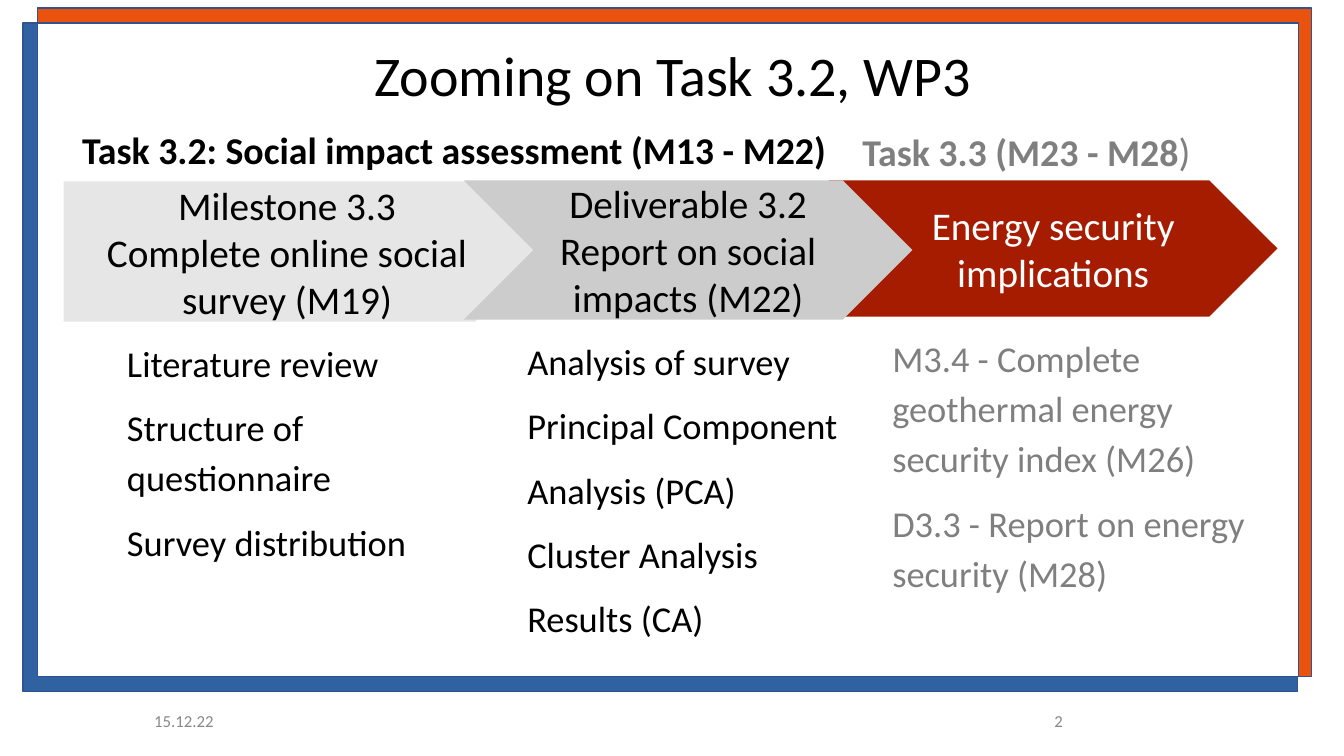
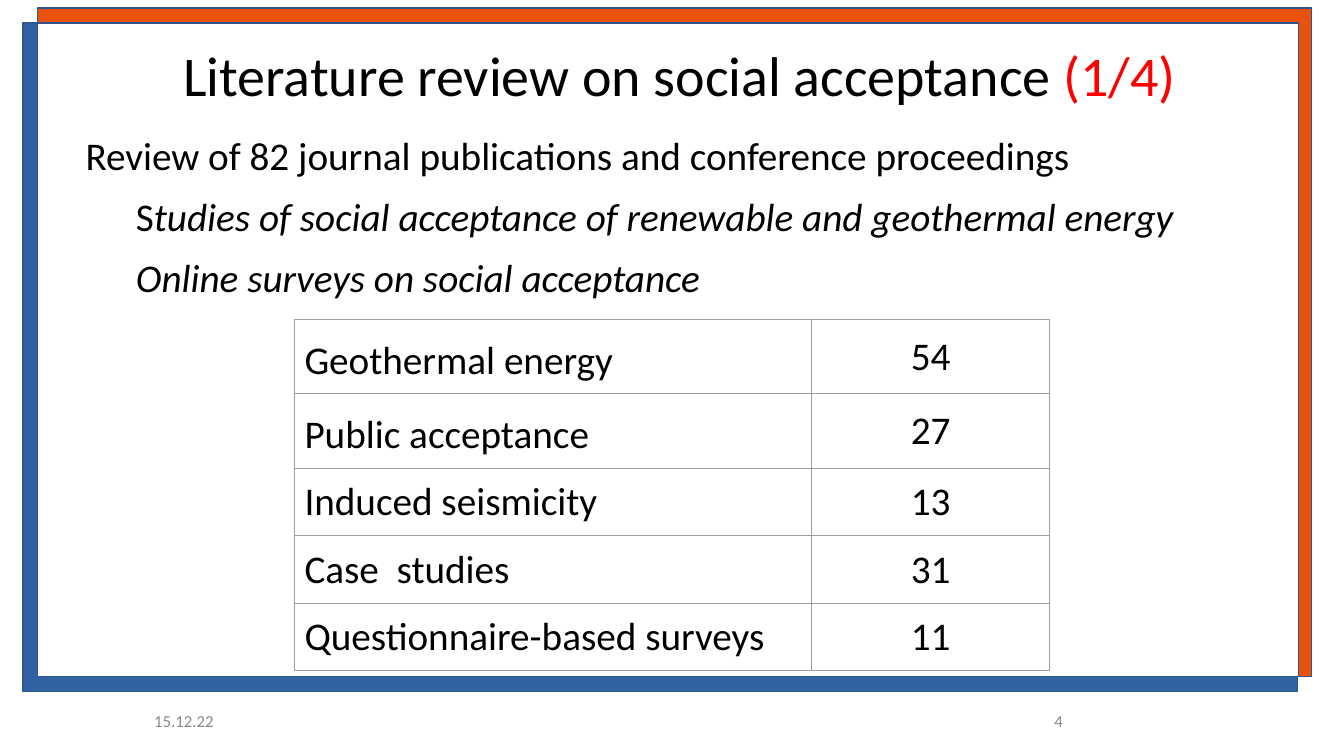
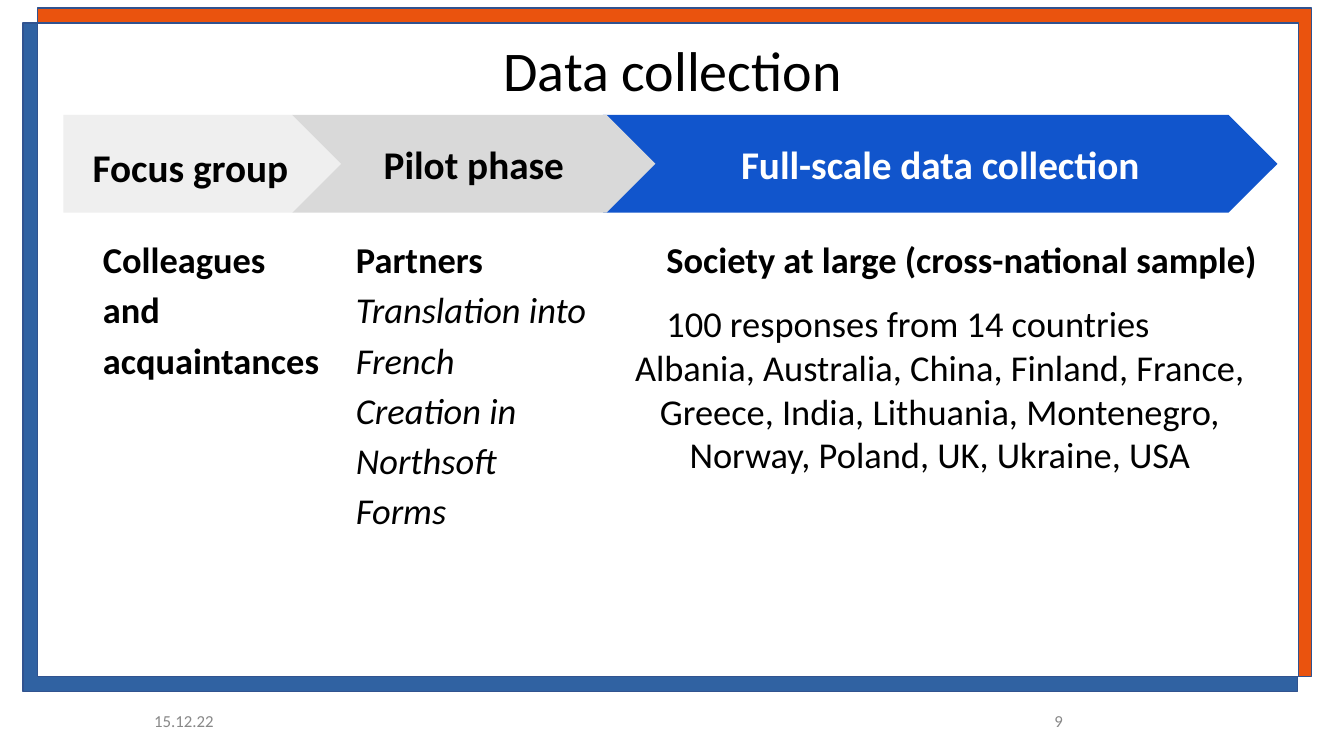
from dataclasses import dataclass
from typing import NamedTuple

from lxml.etree import SubElement
from pptx import Presentation
from pptx.dml.color import RGBColor
from pptx.enum.shapes import MSO_SHAPE
from pptx.enum.text import MSO_ANCHOR, PP_ALIGN
from pptx.oxml.ns import qn
from pptx.util import Inches, Pt

# Shared style
COLORS = {
    "orange": "EA530E", "blue": "3062A2", "edge": "31538F", "white": "FFFFFF",
    "black": "000000", "gray": "7F7F7F", "footer": "888888", "red": "FF0000",
    "brick": "A61C00", "royal": "1155CC", "cloud": "E7E6E6", "silver": "CCCCCC",
    "mist": "EFEFEF", "ash": "D9D9D9", "grid": "9E9E9E",
}
FONT = "Calibri"
DATE = "15.12.22"
LEFT, CENTER, RIGHT = PP_ALIGN.LEFT, PP_ALIGN.CENTER, PP_ALIGN.RIGHT
TOP, MIDDLE = MSO_ANCHOR.TOP, MSO_ANCHOR.MIDDLE
STAGE_INSET = (0.13, 0.13)
LABEL_INSET = (0.1, 0.1)


class Area(NamedTuple):
    left: float
    top: float
    width: float
    height: float

    def lengths(self) -> list:
        return [Inches(value) for value in self]


@dataclass
class Span:
    text: str
    size: float = 26
    color: str = "black"
    bold: bool = False
    italic: bool = False


@dataclass
class Para:
    spans: list[Span]
    align: PP_ALIGN = LEFT
    indent: float = 0
    line: float = 1.0
    before: float = 0
    after: float = 0


@dataclass
class Stage:
    """One arrow of a process, with the details below it."""
    kind: MSO_SHAPE
    fill: str
    area: Area
    heading: list[Para]
    detail_area: Area
    details: list[Para]


# Text
def write(frame, paras: list[Para], anchor: MSO_ANCHOR = TOP, inset: tuple = (0.1, 0.05)) -> None:
    side, end = (Inches(value) for value in inset)
    frame_format = {
        "word_wrap": True, "vertical_anchor": anchor,
        "margin_left": side, "margin_right": side, "margin_top": end, "margin_bottom": end,
    }
    for name, value in frame_format.items():
        setattr(frame, name, value)
    for index, para in enumerate(paras):
        paragraph = frame.paragraphs[0] if index == 0 else frame.add_paragraph()
        fill_paragraph(paragraph, para, first=index == 0)


def fill_paragraph(paragraph, para: Para, first: bool) -> None:
    if para.indent:
        properties = paragraph._p.get_or_add_pPr()
        properties.set("marL", str(Inches(para.indent)))
        properties.set("indent", "0")
    paragraph_format = {
        "alignment": para.align, "line_spacing": para.line,
        "space_before": Pt(0 if first else para.before), "space_after": Pt(para.after),
    }
    for name, value in paragraph_format.items():
        setattr(paragraph, name, value)
    for span in para.spans:
        run = paragraph.add_run()
        run.text = span.text
        font_format = {"name": FONT, "size": Pt(span.size), "bold": span.bold, "italic": span.italic}
        for name, value in font_format.items():
            setattr(run.font, name, value)
        run.font.color.rgb = RGBColor.from_string(COLORS[span.color])


def add_text(page, area: Area, paras: list[Para], anchor: MSO_ANCHOR = TOP,
             inset: tuple = (0.1, 0.05)) -> None:
    box = page.shapes.add_textbox(*area.lengths())
    write(box.text_frame, paras, anchor, inset)


def centered(text: str, size: float = 28, **style) -> Para:
    return Para([Span(text, size, **style)], CENTER)


def detail(text: str, before: float = 10, **style) -> Para:
    return Para([Span(text, **style)], indent=0.5, line=1.15, before=before)


# Shapes
def add_solid(page, kind: MSO_SHAPE, area: Area, fill: str, edge: str = ""):
    shape = page.shapes.add_shape(kind, *area.lengths())
    shape.shadow.inherit = False
    shape.fill.solid()
    shape.fill.fore_color.rgb = RGBColor.from_string(COLORS[fill])
    if edge:
        shape.line.color.rgb = RGBColor.from_string(COLORS[edge])
        shape.line.width = Pt(1)
    else:
        shape.line.fill.background()
    return shape


def add_stages(page, stages: list[Stage]) -> None:
    for stage in stages:
        arrow = add_solid(page, stage.kind, stage.area, stage.fill)
        write(arrow.text_frame, stage.heading, MIDDLE, STAGE_INSET)
        add_text(page, stage.detail_area, stage.details, inset=STAGE_INSET)


def add_table(page, left: float, top: float, widths: list[float], row_height: float,
              rows: list[tuple[Para, Para]]) -> None:
    area = Area(left, top, sum(widths), row_height * len(rows))
    table = page.shapes.add_table(len(rows), len(widths), *area.lengths()).table
    table.first_row = table.horz_banding = False
    for column, width in zip(table.columns, widths):
        column.width = Inches(width)
    for row, paras in zip(table.rows, rows):
        for cell, para in zip(row.cells, paras):
            write(cell.text_frame, [para])
            cell.vertical_anchor = MIDDLE
            for side in ("left", "right", "top", "bottom"):
                setattr(cell, f"margin_{side}", Inches(0.1))
            add_borders(cell)
            cell.fill.background()


def add_borders(cell) -> None:
    properties = cell._tc.get_or_add_tcPr()
    for side in ("lnL", "lnR", "lnT", "lnB"):
        line = SubElement(properties, qn(f"a:{side}"), w=str(Pt(0.75)))
        fill = SubElement(line, qn("a:solidFill"))
        SubElement(fill, qn("a:srgbClr"), val=COLORS["grid"])


# Frame on the layout, title and footers on each page
def move_frame_to_layout(page, layout) -> None:
    tree = layout.shapes.element
    for placeholder in list(layout.placeholders):
        tree.remove(placeholder.element)
    bands = {
        "orange": Area(0.37, 0.08, 12.64, 6.63),
        "blue": Area(0.23, 0.23, 12.64, 6.63),
        "white": Area(0.37, 0.23, 12.51, 6.48),
    }
    bars = [add_solid(page, MSO_SHAPE.RECTANGLE, area, fill, "edge") for fill, area in bands.items()]
    for bar in bars:
        tree.append(bar.element)


def add_page(deck, number: int, title: list[Span], left: float = 0.92, top: float = 0.23,
             line: float = 1.0):
    layout = deck.slide_layouts[6]
    page = deck.slides.add_slide(layout)
    if len(deck.slides) == 1:
        move_frame_to_layout(page, layout)
    add_text(page, Area(left, top, 11.5, 0.91), [Para(title, CENTER, line=line)], MIDDLE)
    footers = [(8.92, 1.72, str(number), RIGHT), (1.43, 1.19, DATE, LEFT)]
    for footer_left, width, text, align in footers:
        para = Para([Span(text, 12, "footer")], align)
        add_text(page, Area(footer_left, 6.95, width, 0.4), [para], MIDDLE)
    return page


# Pages
def build_task_page(deck) -> None:
    page = add_page(deck, 2, [Span("Zooming on Task 3.2, WP3", 40)], top=0.32, line=0.9)
    add_stages(page, [
        Stage(MSO_SHAPE.CHEVRON, "brick", Area(8.22, 1.79, 4.45, 1.35),
              [centered("Energy security implications", color="white")],
              Area(8.22, 3.14, 4.45, 3.32),
              [detail("M3.4 - Complete geothermal energy security index (M26)", color="gray"),
               detail("D3.3 - Report on energy security (M28)", color="gray")]),
        Stage(MSO_SHAPE.PENTAGON, "cloud", Area(0.63, 1.8, 4.78, 1.39),
              [centered("Milestone 3.3"), centered("Complete online social survey (M19)")],
              Area(0.63, 3.19, 3.96, 3.27),
              [detail(text) for text in
               ("Literature review", "Structure of questionnaire", "Survey distribution")]),
        Stage(MSO_SHAPE.CHEVRON, "silver", Area(4.6, 1.79, 4.45, 1.38),
              [centered("Deliverable 3.2"), centered("Report on social impacts (M22)")],
              Area(4.6, 3.17, 4.45, 3.29),
              [detail(text) for text in
               ("Analysis of survey", "Principal Component", "Analysis (PCA)",
                "Cluster Analysis", "Results (CA)")]),
    ])
    add_text(page, Area(0.63, 1.16, 7.75, 0.66),
             [centered("Task 3.2: Social impact assessment (M13 - M22)", 27, bold=True)],
             inset=LABEL_INSET)
    next_task = [Span("Task 3.3 (M23 - M28", 27, "gray", bold=True), Span(")", 28, "gray")]
    add_text(page, Area(8.39, 1.16, 3.58, 0.67), [Para(next_task, CENTER)], inset=LABEL_INSET)


def build_literature_page(deck) -> None:
    title = [Span("Literature review on social acceptance ", 40), Span("(1/4)", 40, "red")]
    page = add_page(deck, 4, title, left=0.99, top=0.28)
    points = [
        (0.12, [Span("Review of 82 journal publications and conference proceedings", 28)]),
        (0.62, [Span("S", 28),
                Span("tudies of social acceptance of renewable and geothermal energy", 28, italic=True)]),
        (0.62, [Span("Online surveys on social acceptance", 28, italic=True)]),
    ]
    add_text(page, Area(0.63, 1.18, 12.03, 5.42),
             [Para(spans, indent=indent, line=1.15, before=5) for indent, spans in points])
    topics = [
        ("Geothermal energy", 54, 1.15),
        ("Public acceptance", 27, 1.15),
        ("Induced seismicity", 13, 1.0),
        ("Case  studies", 31, 1.0),
        ("Questionnaire-based surveys", 11, 1.0),
    ]
    rows = [(Para([Span(topic, 28)], line=line), centered(str(count)))
            for topic, count, line in topics]
    add_table(page, 2.92, 3.17, [5.13, 2.36], 0.67, rows)


def build_collection_page(deck) -> None:
    page = add_page(deck, 9, [Span("Data collection", 40)])
    countries = ("Albania, Australia, China, Finland, France, Greece, India, Lithuania, "
                 "Montenegro, Norway, Poland, UK, Ukraine, USA")
    top, height, detail_top, detail_height = 1.14, 0.97, 2.16, 4.44
    focus_heading = Para([Span("Focus group", 28, bold=True)], CENTER, line=1.15, after=6)
    add_stages(page, [
        Stage(MSO_SHAPE.CHEVRON, "royal", Area(5.98, top, 6.69, height),
              [centered("Full-scale data collection", color="white", bold=True)],
              Area(5.98, detail_top, 6.69, detail_height),
              [detail("Society at large (cross-national sample)", bold=True),
               detail("100 responses from 14 countries"),
               centered(countries, 26)]),
        Stage(MSO_SHAPE.PENTAGON, "mist", Area(0.63, top, 2.76, height), [focus_heading],
              Area(0.39, detail_top, 3.01, detail_height),
              [detail("Colleagues and acquaintances", bold=True)]),
        Stage(MSO_SHAPE.CHEVRON, "ash", Area(2.9, top, 3.6, height),
              [centered("Pilot phase", bold=True)],
              Area(2.9, detail_top, 3.08, detail_height),
              [detail("Partners", bold=True),
               detail("Translation into French", before=0, italic=True),
               detail("Creation in Northsoft Forms", before=0, italic=True)]),
    ])


def main() -> None:
    deck = Presentation()
    deck.slide_width, deck.slide_height = Inches(13.33), Inches(7.5)
    build_task_page(deck)
    build_literature_page(deck)
    build_collection_page(deck)
    deck.save("out.pptx")


if __name__ == "__main__":
    main()
